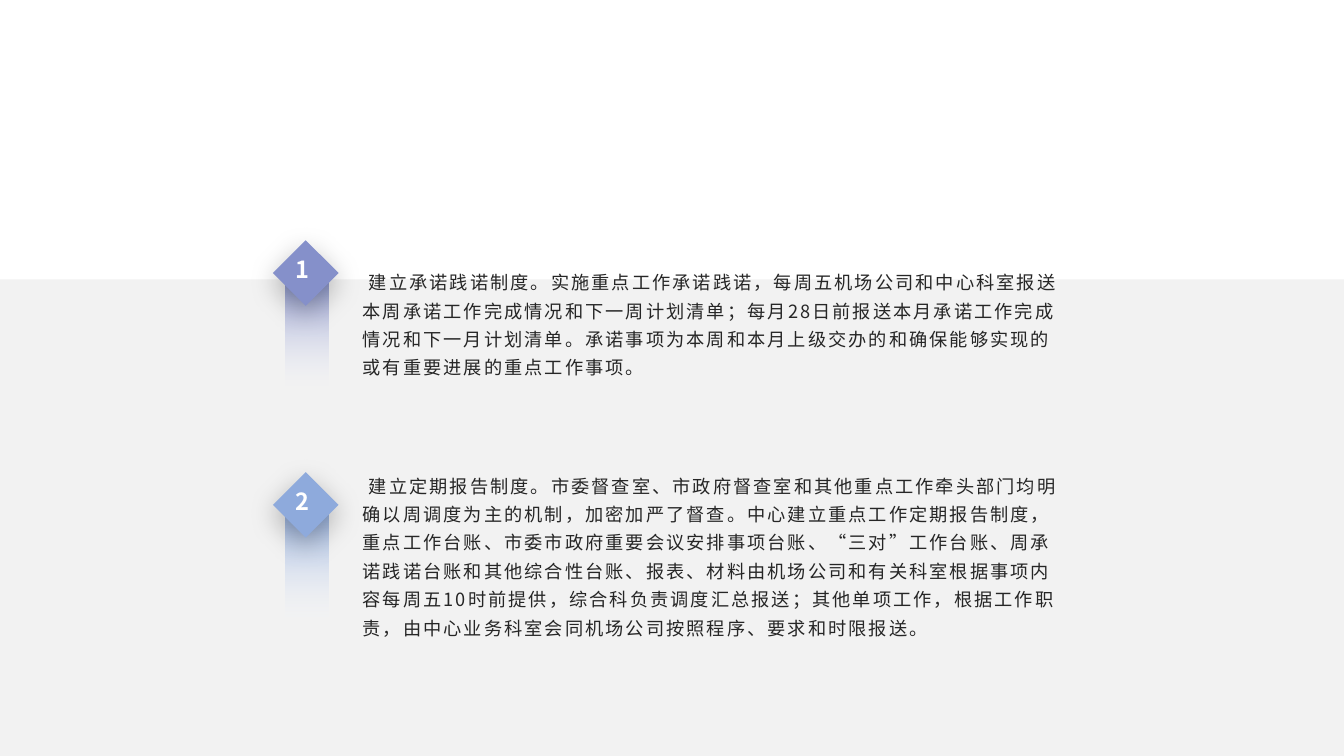
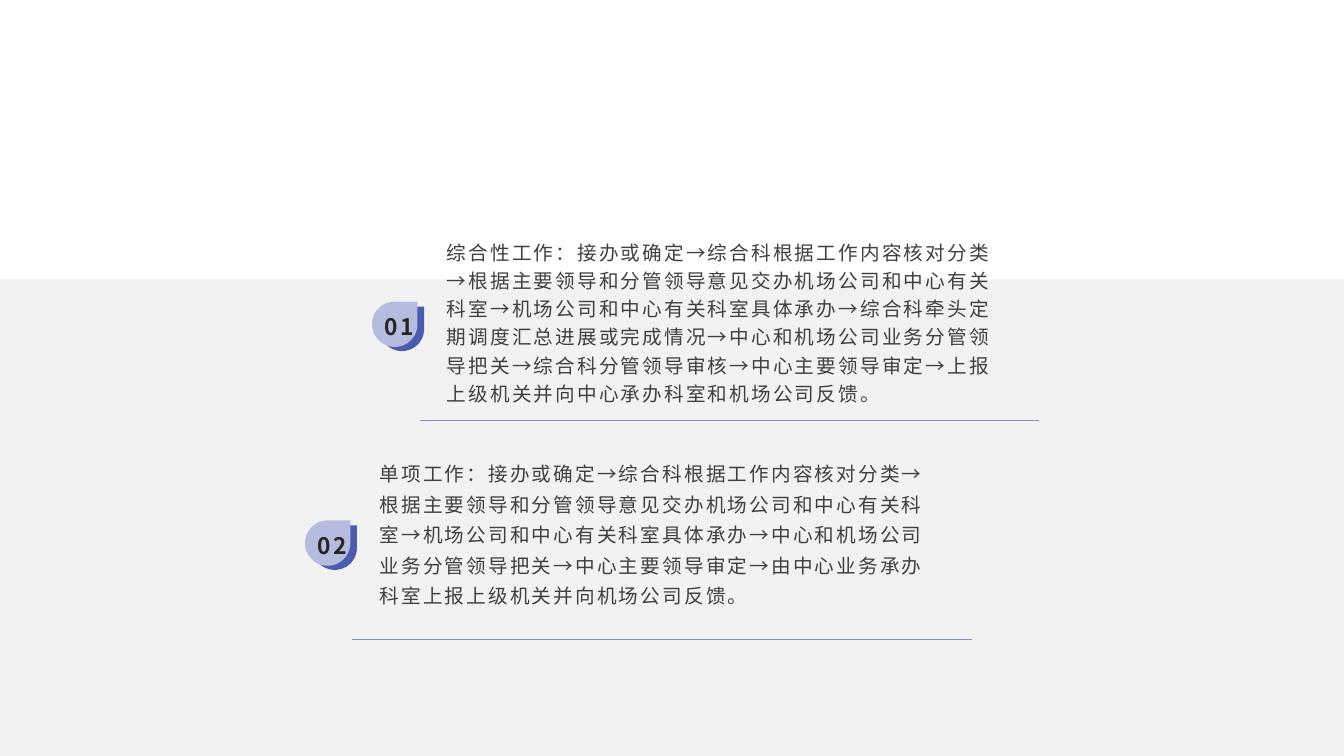
from dataclasses import dataclass

from pptx import Presentation
from pptx import dml
from pptx import util as u
from pptx.dml.color import RGBColor
from pptx.enum import shapes, text
from pptx.oxml import parse_xml
from pptx.oxml.ns import nsdecls, qn
from pptx.oxml.xmlchemy import OxmlElement


@dataclass(frozen=True)
class Theme:
    font: str = "Noto Sans CJK SC"
    white: str = "FFFFFF"
    band: str = "F2F2F2"
    ink: str = "262626"
    grey: str = "404040"
    violet: str = "8590CA"
    blue: str = "8EAADC"
    indigo: str = "4C5CAF"
    lilac: str = "B6BCDF"
    body: float = 13
    step: float = 14
    number: float = 16.8
    badge: float = 16.2


theme = Theme()
COLUMNS, ROWS = 160, 90

presentation = Presentation()
presentation.slide_width = u.Inches(13.33)
presentation.slide_height = u.Inches(7.5)
column = presentation.slide_width / COLUMNS
row = presentation.slide_height / ROWS


def add_block(parent, kind, left, top, width, height, color):
    shape = parent.add_shape(kind, round(left * column), round(top * row),
                             round(width * column), round(height * row))
    shape.shadow.inherit = False
    shape.line.fill.background()
    shape.fill.solid()
    shape.fill.fore_color.rgb = RGBColor.from_string(color)
    return shape


def add_words(slide, words, left, top, width, height, size, color, bold=False,
              tracking=0, leading=1.0, inset=True, middle=True, centred=False):
    box = slide.shapes.add_textbox(round(left * column), round(top * row),
                                   round(width * column), round(height * row))
    frame = box.text_frame
    frame.word_wrap = True
    frame.vertical_anchor = text.MSO_ANCHOR.MIDDLE if middle else text.MSO_ANCHOR.TOP
    if not inset:
        frame.margin_left = frame.margin_right = frame.margin_top = frame.margin_bottom = 0
    paragraph = frame.paragraphs[0]
    paragraph.line_spacing = leading
    paragraph.alignment = text.PP_ALIGN.CENTER if centred else text.PP_ALIGN.LEFT
    run = paragraph.add_run()
    run.text = words
    run.font.size = u.Pt(size)
    run.font.bold = bold
    run.font.color.rgb = RGBColor.from_string(color)
    run.font.name = theme.font
    properties = run._r.get_or_add_rPr()
    properties.set("spc", str(round(tracking * 100)))
    east_asian = OxmlElement("a:ea")
    east_asian.set("typeface", theme.font)
    properties.find(qn("a:latin")).addnext(east_asian)


slides = []
for _ in range(2):
    slide = presentation.slides.add_slide(presentation.slide_layouts[6])
    add_block(slide.shapes, shapes.MSO_SHAPE.RECTANGLE, 0, 33.25, COLUMNS, ROWS - 33.25, theme.band)
    slides.append(slide)
systems_slide, workflow_slide = slides

systems = [
    (theme.violet, " 建立承诺践诺制度。实施重点工作承诺践诺，每周五机场公司和中心科室报送本周承诺工作完成情况和下一周计划清单；"
     "每月28日前报送本月承诺工作完成情况和下一月计划清单。承诺事项为本周和本月上级交办的和确保能够实现的或有重要进展的重点工作事项。"),
    (theme.blue, " 建立定期报告制度。市委督查室、市政府督查室和其他重点工作牵头部门均明确以周调度为主的机制，加密加严了督查。"
     "中心建立重点工作定期报告制度，重点工作台账、市委市政府重要会议安排事项台账、“三对”工作台账、周承诺践诺台账和其他综合性台账、"
     "报表、材料由机场公司和有关科室根据事项内容每周五10时前提供，综合科负责调度汇总报送；其他单项工作，根据工作职责，"
     "由中心业务科室会同机场公司按照程序、要求和时限报送。"),
]
for index, (color, words) in enumerate(systems):
    top = 28.6 + index * 27.6
    add_words(systems_slide, words, 42, top - 1.1, 85.5, 21.6, theme.body, theme.ink,
              tracking=1.5, leading=1.3)

    ribbon = add_block(systems_slide.shapes, shapes.MSO_SHAPE.RECTANGLE, 34, top + 4.4, 5.1, 14.6, color)
    ribbon.fill.gradient()
    ribbon.fill.gradient_angle = 90
    for stop, stop_color in zip(ribbon.fill.gradient_stops, (theme.white, color)):
        stop.color.rgb = RGBColor.from_string(stop_color)
    clear = OxmlElement("a:alpha")
    clear.set("val", "0")
    next(ribbon._element.spPr.iter(qn("a:srgbClr"))).append(clear)

    diamond = add_block(systems_slide.shapes, shapes.MSO_SHAPE.FLOWCHART_DECISION, 32.5, top, 7.8, 7.8, color)
    diamond._element.spPr.find(qn("a:effectLst")).append(parse_xml(
        f'<a:outerShdw {nsdecls("a")} blurRad="{u.Pt(20)}" dist="{u.Pt(6)}" dir="5400000" '
        'algn="t" rotWithShape="0"><a:srgbClr val="000000"><a:alpha val="27000"/></a:srgbClr></a:outerShdw>'))
    add_words(systems_slide, str(index + 1), 34, top + 0.45, 3.75, 6, theme.number, theme.white, bold=True)

workflows = [
    (1.2, "综合性工作：接办或确定→综合科根据工作内容核对分类→根据主要领导和分管领导意见交办机场公司和中心有关科室→"
     "机场公司和中心有关科室具体承办→综合科牵头定期调度汇总进展或完成情况→中心和机场公司业务分管领导把关→"
     "综合科分管领导审核→中心主要领导审定→上报上级机关并向中心承办科室和机场公司反馈。"),
    (1.3, "单项工作：接办或确定→综合科根据工作内容核对分类→根据主要领导和分管领导意见交办机场公司和中心有关科室→"
     "机场公司和中心有关科室具体承办→中心和机场公司业务分管领导把关→中心主要领导审定→"
     "由中心业务承办科室上报上级机关并向机场公司反馈。"),
]
for index, (leading, words) in enumerate(workflows):
    left = 44.3 - index * 8
    top = 35.9 + index * 26.05
    add_words(workflow_slide, words, left + 8.9, top - 7.8, 67.3, 20.9, theme.step, theme.grey,
              tracking=1.5, leading=leading, inset=False, middle=False)

    rule_row = round((top + 14.15) * row)
    rule = workflow_slide.shapes.add_connector(
        shapes.MSO_CONNECTOR.STRAIGHT, round((left + 5.65) * column), rule_row,
        round((left + 79.4) * column), rule_row)
    rule.line.color.rgb = RGBColor.from_string(theme.violet)
    rule.line.width = u.Pt(0.5)
    rule._element.spPr.append(OxmlElement("a:effectLst"))

    badge = workflow_slide.shapes.add_group_shape()
    for shift, drop, size, color in ((0.9, 0.6, 5.3, theme.indigo), (0, 0, 5.4, theme.lilac)):
        add_block(badge.shapes, shapes.MSO_SHAPE.TEAR, left + shift, top + drop, size, size, color)
    add_words(workflow_slide, f"{index + 1:02}", left + 0.9, top + 0.25, 4.6, 4.4, theme.badge, theme.ink,
              bold=True, tracking=2, leading=1.3, inset=False, centred=True)

presentation.save("out.pptx")
